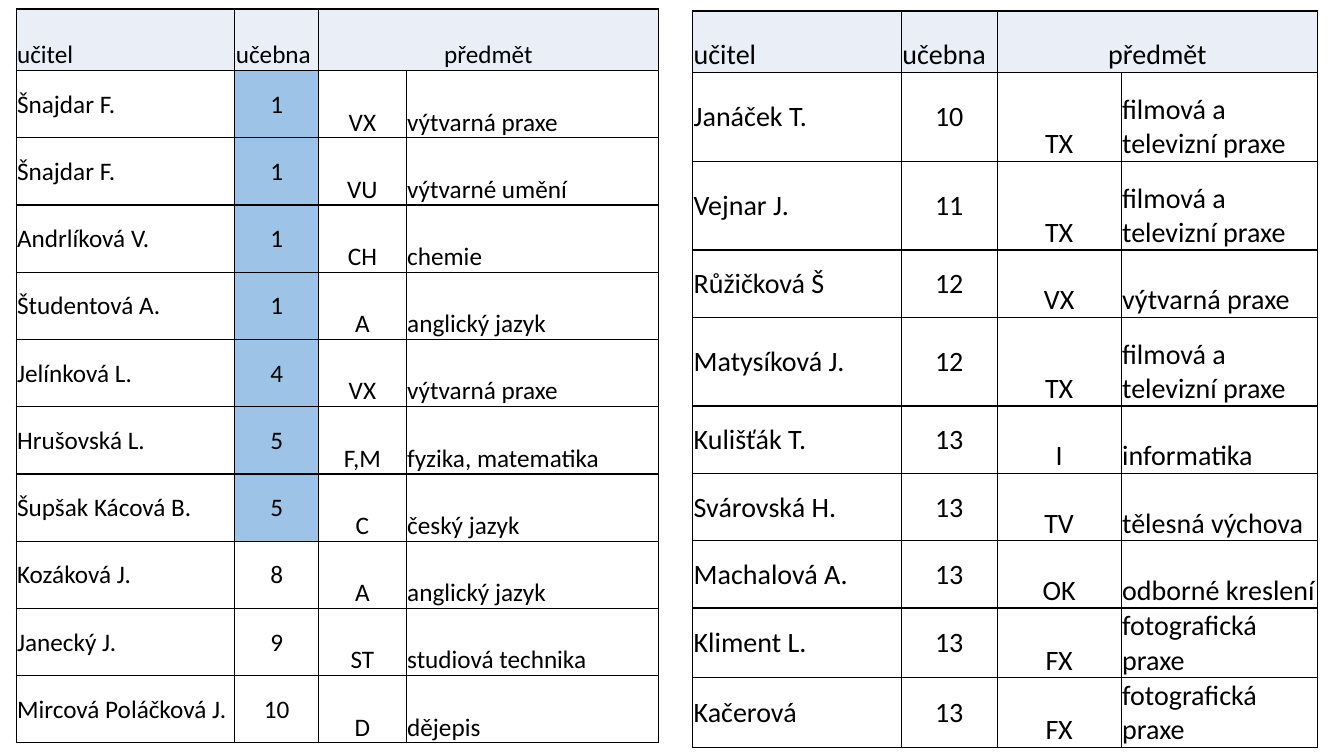
from lxml import etree
from pptx import Presentation
from pptx.dml.color import RGBColor
from pptx.enum.text import MSO_ANCHOR, PP_ALIGN
from pptx.oxml.ns import qn
from pptx.util import Inches, Pt

LEFT, CENTER = PP_ALIGN.LEFT, PP_ALIGN.CENTER
MIDDLE, BOTTOM = MSO_ANCHOR.MIDDLE, MSO_ANCHOR.BOTTOM
BLACK = RGBColor(0x00, 0x00, 0x00)
PALE = RGBColor(0xEA, 0xEF, 0xF7)
BLUE = RGBColor(0x9D, 0xC3, 0xE6)

HEAD = ("učitel", "učebna", "předmět", "")
HEAD_H = 0.61
ALIGNS = (LEFT, CENTER, CENTER, LEFT)
ANCHORS = (MIDDLE, MIDDLE, BOTTOM, BOTTOM)
INSETS = {"margin_left": 0.01, "margin_right": 0.01,
          "margin_top": 0.01, "margin_bottom": 0}

FIRST = [
    ("Šnajdar F.", "1", "VX", "výtvarná praxe"),
    ("Šnajdar F.", "1", "VU", "výtvarné umění"),
    ("Andrlíková V.", "1", "CH", "chemie"),
    ("Študentová A.", "1", "A", "anglický jazyk"),
    ("Jelínková L.", "4", "VX", "výtvarná praxe"),
    ("Hrušovská L.", "5", "F,M", "fyzika, matematika"),
    ("Šupšak Kácová B.", "5", "C", "český jazyk"),
    ("Kozáková J.", "8", "A", "anglický jazyk"),
    ("Janecký J.", "9", "ST", "studiová technika"),
    ("Mircová Poláčková J.", "10", "D", "dějepis"),
]
SECOND = [
    ("Janáček T.", "10", "TX", "filmová a televizní praxe"),
    ("Vejnar J.", "11", "TX", "filmová a televizní praxe"),
    ("Růžičková Š", "12", "VX", "výtvarná praxe"),
    ("Matysíková J.", "12", "TX", "filmová a televizní praxe"),
    ("Kulišťák T.", "13", "I", "informatika"),
    ("Svárovská H.", "13", "TV", "tělesná výchova"),
    ("Machalová A.", "13", "OK", "odborné kreslení"),
    ("Kliment L.", "13", "FX", "fotografická praxe"),
    ("Kačerová", "13", "FX", "fotografická praxe"),
]

# Position, column widths, text size and rows of each table
TABLES = [
    ((0.16, 0.09, 6.38, 7.28), (2.17, 0.83, 0.87, 2.5), 18, FIRST),
    ((6.87, 0.11, 6.21, 7.26), (2.07, 0.95, 1.23, 1.95), 20, SECOND),
]


def frame(cell):
    """Draw a thin black line on all four sides of a cell."""
    props = cell._tc.get_or_add_tcPr()
    for side in ("lnL", "lnR", "lnT", "lnB"):
        line = etree.SubElement(props, qn("a:" + side), w=str(Pt(1)))
        fill = etree.SubElement(line, qn("a:solidFill"))
        etree.SubElement(fill, qn("a:srgbClr"), val=str(BLACK))


def put(cell, text, size, align, anchor, color):
    """Fill and format one cell."""
    frame(cell)
    if color is None:
        cell.fill.background()
    else:
        cell.fill.solid()
        cell.fill.fore_color.rgb = color
    for name, inset in INSETS.items():
        setattr(cell, name, Inches(inset))
    cell.vertical_anchor = anchor
    para = cell.text_frame.paragraphs[0]
    para.alignment = align
    font = para.font
    if text:
        run = para.add_run()
        run.text = text
        font = run.font
    looks = {"size": Pt(size), "name": "Calibri", "bold": False}
    for name, value in looks.items():
        setattr(font, name, value)
    font.color.rgb = BLACK


deck = Presentation()
deck.slide_width, deck.slide_height = Inches(13.33), Inches(7.5)
slide = deck.slides.add_slide(deck.slide_layouts[6])

for box, widths, size, rows in TABLES:
    shape = slide.shapes.add_table(len(rows) + 1, len(widths), *map(Inches, box))
    table = shape.table
    table.first_row = table.horz_banding = False
    for col, width in zip(table.columns, widths):
        col.width = Inches(width)

    # Film rows wrap and are taller; the others share the remaining height
    tall = [0.88 if "filmová" in row[3] else 0 for row in rows]
    low = (box[3] - HEAD_H - sum(tall)) / tall.count(0)
    for line, height in zip(table.rows, [HEAD_H] + [h or low for h in tall]):
        line.height = Inches(height)

    # Header, with the subject spanning two columns
    table.cell(0, 2).merge(table.cell(0, 3))
    for c, text in enumerate(HEAD):
        align = CENTER if c == 2 else LEFT
        put(table.cell(0, c), text, size, align, BOTTOM, PALE)

    # Teachers; rooms 1 to 5 are marked blue
    for r, row in enumerate(rows, 1):
        for c, text in enumerate(row):
            color = BLUE if c == 1 and int(text) <= 5 else None
            put(table.cell(r, c), text, size, ALIGNS[c], ANCHORS[c], color)

deck.save("out.pptx")
